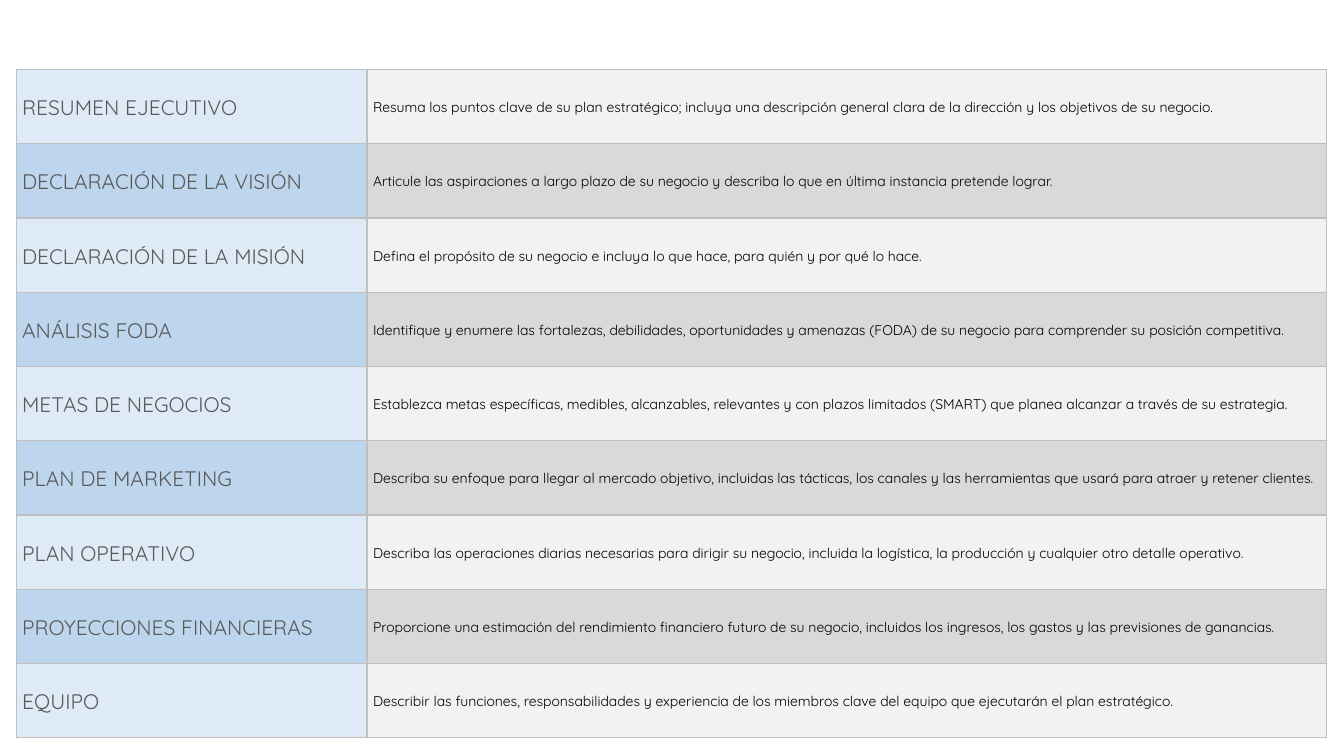
from lxml.etree import SubElement
from pptx import Presentation
from pptx.dml.color import RGBColor
from pptx.enum.text import MSO_ANCHOR
from pptx.oxml.ns import qn
from pptx.util import Inches, Pt

FONT = "Quicksand"
BORDER = "BFBFBF"
TOPIC_FILLS = ("DEEAF6", "BDD6EE")
DETAIL_FILLS = ("F2F2F2", "D9D9D9")

SECTIONS = [
    ("RESUMEN EJECUTIVO",
     "Resuma los puntos clave de su plan estratégico; incluya una descripción general clara "
     "de la dirección y los objetivos de su negocio."),
    ("DECLARACIÓN DE LA VISIÓN",
     "Articule las aspiraciones a largo plazo de su negocio y describa lo que en última "
     "instancia pretende lograr."),
    ("DECLARACIÓN DE LA MISIÓN",
     "Defina el propósito de su negocio e incluya lo que hace, para quién y por qué lo hace."),
    ("ANÁLISIS FODA",
     "Identifique y enumere las fortalezas, debilidades, oportunidades y amenazas (FODA) "
     "de su negocio para comprender su posición competitiva."),
    ("METAS DE NEGOCIOS",
     "Establezca metas específicas, medibles, alcanzables, relevantes y con plazos limitados "
     "(SMART) que planea alcanzar a través de su estrategia."),
    ("PLAN DE MARKETING",
     "Describa su enfoque para llegar al mercado objetivo, incluidas las tácticas, los canales "
     "y las herramientas que usará para atraer y retener clientes."),
    ("PLAN OPERATIVO",
     "Describa las operaciones diarias necesarias para dirigir su negocio, incluida la "
     "logística, la producción y cualquier otro detalle operativo."),
    ("PROYECCIONES FINANCIERAS",
     "Proporcione una estimación del rendimiento financiero futuro de su negocio, incluidos "
     "los ingresos, los gastos y las previsiones de ganancias."),
    ("EQUIPO",
     "Describir las funciones, responsabilidades y experiencia de los miembros clave del "
     "equipo que ejecutarán el plan estratégico."),
]


def rgb(color):
    return RGBColor.from_string(color)


def write_text(tf, text, size, color, font=FONT, line_spacing=1.07):
    p = tf.paragraphs[0]
    p.line_spacing = line_spacing
    r = p.add_run()
    r.text = text
    r.font.name = font
    r.font.size = Pt(size)
    r.font.color.rgb = rgb(color)


def set_borders(cell, color, width):
    """Outline all four sides; must run before the cell gets its fill."""
    tc_pr = cell._tc.get_or_add_tcPr()
    for side in ("lnL", "lnR", "lnT", "lnB"):
        ln = SubElement(tc_pr, qn(f"a:{side}"), w=str(Pt(width)))
        SubElement(SubElement(ln, qn("a:solidFill")), qn("a:srgbClr"), val=color)


def format_cell(cell, text, fill, size, color):
    set_borders(cell, BORDER, 1)
    cell.fill.solid()
    cell.fill.fore_color.rgb = rgb(fill)
    cell.vertical_anchor = MSO_ANCHOR.MIDDLE
    cell.margin_left = cell.margin_right = Inches(0.06)
    cell.margin_top = cell.margin_bottom = 0
    write_text(cell.text_frame, text, size=size, color=color)


def add_plan_table(slide, left, top, width, height, topic_width):
    table = slide.shapes.add_table(len(SECTIONS), 2, left, top, width, height).table
    table.columns[0].width = topic_width
    table.columns[1].width = width - topic_width
    for i, (topic, detail) in enumerate(SECTIONS):
        format_cell(table.cell(i, 0), topic, TOPIC_FILLS[i % 2], size=15, color="595959")
        format_cell(table.cell(i, 1), detail, DETAIL_FILLS[i % 2], size=10, color="000000")


def main():
    prs = Presentation()
    prs.slide_width = Inches(13.33)
    prs.slide_height = Inches(7.5)
    slide = prs.slides.add_slide(prs.slide_layouts[6])
    add_plan_table(slide, Inches(0.16), Inches(0.69), Inches(13), Inches(6.63),
                   topic_width=Inches(3.48))
    prs.save("out.pptx")


if __name__ == "__main__":
    main()
